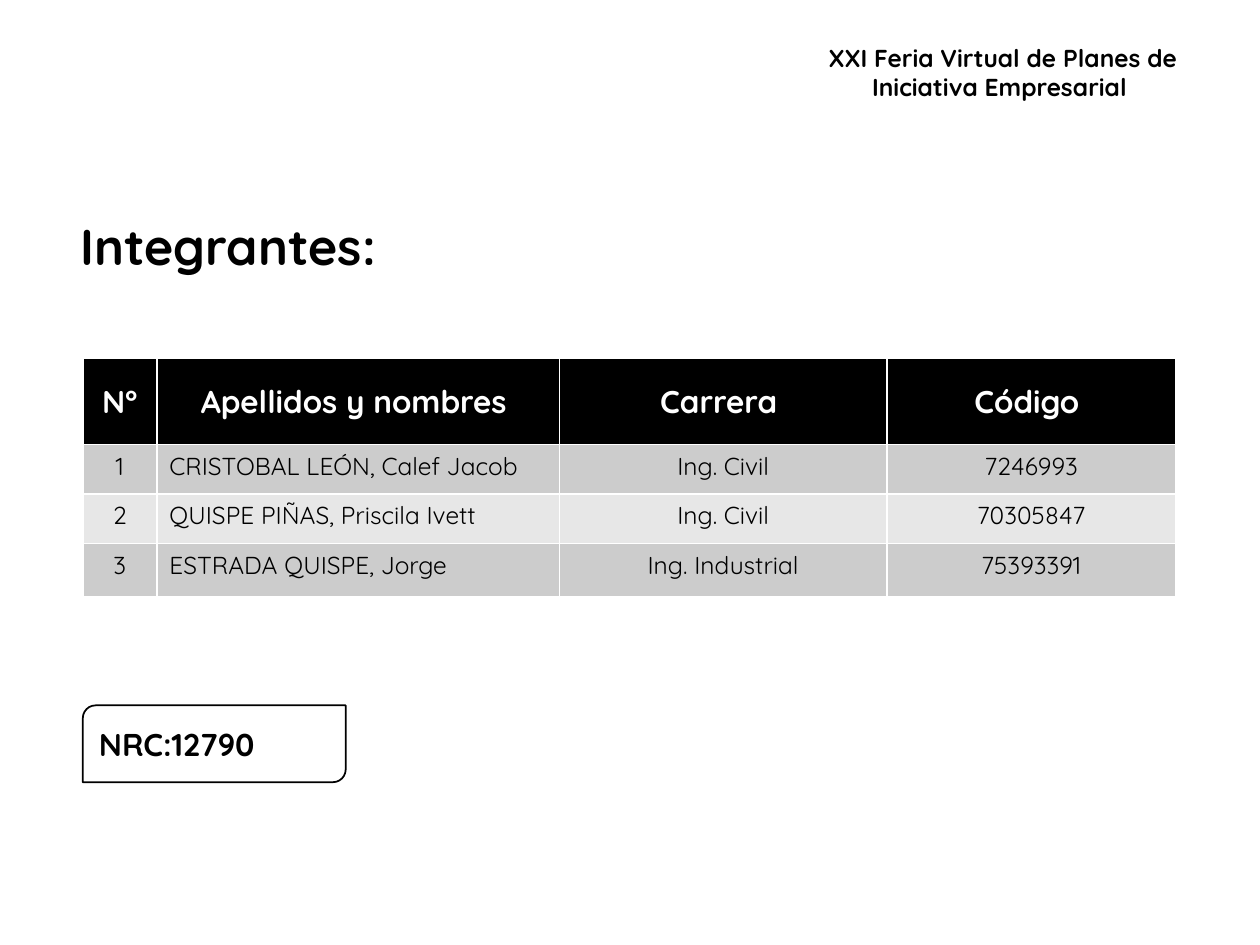
from pptx import Presentation
from pptx.dml.color import RGBColor
from pptx.enum import shapes, text
from pptx.util import Cm, Pt

CENTER, LEFT = text.PP_ALIGN.CENTER, text.PP_ALIGN.LEFT
MIDDLE, TOP = text.MSO_ANCHOR.MIDDLE, text.MSO_ANCHOR.TOP


def rgb(value):
    return RGBColor.from_string(value)


def write(tf, words, size, color="000000", bold=True, align=LEFT):
    tf.word_wrap = True
    p = tf.paragraphs[0]
    p.text = words
    p.alignment = align
    p.font.name = "Quicksand"
    p.font.size = Pt(size)
    p.font.bold = bold
    p.font.color.rgb = rgb(color)
    return p


prs = Presentation()
prs.slide_width, prs.slide_height = Cm(25.4), Cm(19.05)
s = prs.slides.add_slide(prs.slide_layouts[6])

# Event name and title
event = s.shapes.add_textbox(Cm(15.98), Cm(0.74), Cm(8.48), Cm(1.45))
write(event.text_frame, "XXI Feria Virtual de Planes de Iniciativa Empresarial ", 14, align=CENTER)

title = s.shapes.add_textbox(Cm(1.37), Cm(4.32), Cm(7.77), Cm(1.42))
title.text_frame.vertical_anchor = MIDDLE
write(title.text_frame, "Integrantes:", 28.8).line_spacing = 0.9

# Members table; its default style draws the white borders
rows = [
    ("N°", "Apellidos y nombres ", "Carrera ", "Código "),
    ("1", "CRISTOBAL LEÓN, Calef Jacob", "Ing. Civil", "7246993"),
    ("2", "QUISPE PIÑAS, Priscila Ivett", "Ing. Civil", "70305847"),
    ("3", "ESTRADA QUISPE, Jorge", "Ing. Industrial", "75393391"),
]
widths = [1.49, 8.12, 6.6, 5.82]
heights = [1.74, 1, 1, 1.06]
table = s.shapes.add_table(len(rows), len(widths), Cm(1.67), Cm(7.22),
                           Cm(sum(widths)), Cm(sum(heights))).table
for column, width in zip(table.columns, widths):
    column.width = Cm(width)
for i, (row, height) in enumerate(zip(rows, heights)):
    table.rows[i].height = Cm(height)
    header = i == 0
    fill = "000000" if header else "CCCCCC" if i % 2 else "E7E7E7"
    for j, words in enumerate(row):
        cell = table.cell(i, j)
        cell.fill.solid()
        cell.fill.fore_color.rgb = rgb(fill)
        cell.vertical_anchor = MIDDLE if header else TOP
        write(cell.text_frame, words, 18 if header else 14,
              "FFFFFF" if header else "000000", header,
              LEFT if j == 1 and not header else CENTER)

# Course number
nrc = s.shapes.add_shape(shapes.MSO_SHAPE.ROUND_2_DIAG_RECTANGLE,
                         Cm(1.67), Cm(14.22), Cm(5.3), Cm(1.55))
nrc.shadow.inherit = False
nrc.fill.solid()
nrc.fill.fore_color.rgb = rgb("FFFFFF")
nrc.line.color.rgb = rgb("000000")
nrc.line.width = Pt(1)
nrc.text_frame.vertical_anchor = MIDDLE
write(nrc.text_frame, "NRC:12790", 18)

prs.save("out.pptx")
